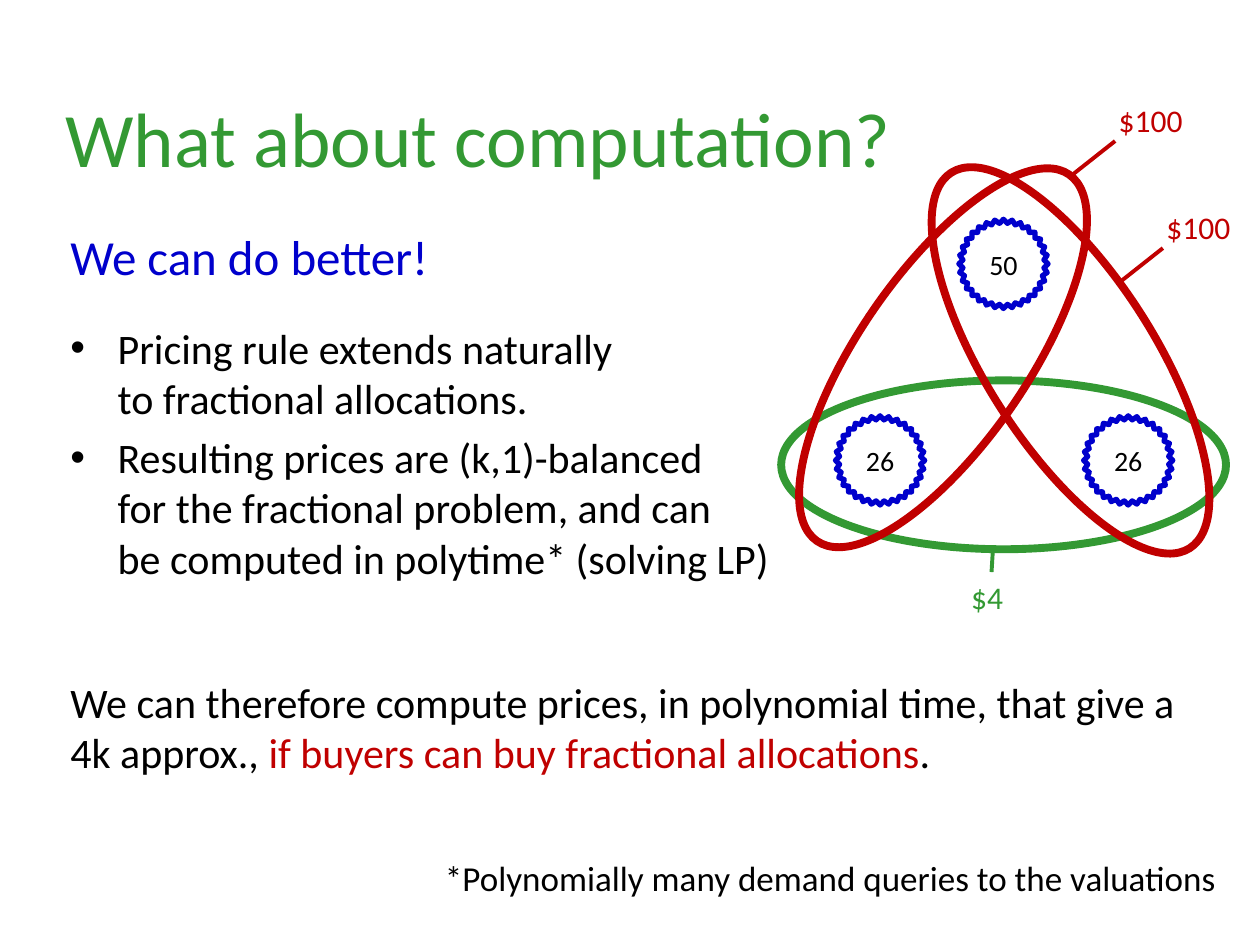
from lxml import etree
from pptx import Presentation
from pptx.dml.color import RGBColor
from pptx.enum.shapes import MSO_CONNECTOR, MSO_SHAPE
from pptx.enum.text import MSO_ANCHOR, PP_ALIGN
from pptx.oxml.ns import qn
from pptx.util import Pt

STAR, ELLIPSE = MSO_SHAPE.STAR_32_POINT, MSO_SHAPE.OVAL
STRAIGHT = MSO_CONNECTOR.STRAIGHT
LEFT, CENTER, RIGHT = PP_ALIGN.LEFT, PP_ALIGN.CENTER, PP_ALIGN.RIGHT
MIDDLE = MSO_ANCHOR.MIDDLE
BLACK, WHITE, BLUE, GREEN, RED = "000000", "FFFFFF", "0000CC", "339933", "C00000"


def rgb(value):
    return RGBColor.from_string(value)


class SlideBuilder:
    """Hold the slide and its font, and add each kind of element in points."""

    font = "Calibri"

    def __init__(self, slide):
        self.slide = slide

    def add_text(self, paragraph, text, size, color):
        for index, line in enumerate(text.split("\n")):
            if index:
                paragraph.add_line_break()
            run = paragraph.add_run()
            run.text = line
            run.font.name = self.font
            run.font.size = Pt(size)
            run.font.color.rgb = rgb(color)

    def bullet(self, paragraph, indent):
        properties = paragraph._p.get_or_add_pPr()
        properties.set("marL", str(Pt(indent)))
        properties.set("indent", str(-Pt(indent)))
        etree.SubElement(properties, qn("a:buFont")).set("typeface", "Arial")
        etree.SubElement(properties, qn("a:buChar")).set("char", "•")

    def text_frame(self, left, top, width, height, wrap=True):
        box = self.slide.shapes.add_textbox(Pt(left), Pt(top), Pt(width), Pt(height))
        box.text_frame.word_wrap = wrap
        return box.text_frame

    def label(self, text, bounds, size, color, align=LEFT, wrap=True):
        paragraph = self.text_frame(*bounds, wrap=wrap).paragraphs[0]
        paragraph.alignment = align
        self.add_text(paragraph, text, size, color)

    def body(self, bounds, paragraphs):
        frame = self.text_frame(*bounds)
        for index, (gap, size, bulleted, runs) in enumerate(paragraphs):
            paragraph = frame.add_paragraph() if index else frame.paragraphs[0]
            paragraph.alignment = LEFT
            paragraph.space_before = Pt(gap)
            if bulleted:
                self.bullet(paragraph, 27)
            for text, color in runs:
                self.add_text(paragraph, text, size, color)

    def outline(self, kind, left, top, width, height, color, weight):
        shape = self.slide.shapes.add_shape(kind, Pt(left), Pt(top), Pt(width), Pt(height))
        shape.shadow.inherit = False
        shape.fill.background()
        shape.line.color.rgb = rgb(color)
        shape.line.width = Pt(weight)
        return shape

    def item(self, value, left, top):
        star = self.outline(STAR, left, top, 51, 51, BLUE, 3)
        star.adjustments[0] = 0.456
        star.fill.solid()
        star.fill.fore_color.rgb = rgb(WHITE)
        frame = star.text_frame
        frame.margin_left = frame.margin_right = 0
        frame.vertical_anchor = MIDDLE
        frame.paragraphs[0].alignment = CENTER
        self.add_text(frame.paragraphs[0], value, 16, BLACK)

    def bundle(self, left, top, color, rotation=0):
        self.outline(ELLIPSE, left, top, 254.2, 96.5, color, 4.5).rotation = rotation

    def leader(self, x1, y1, x2, y2, color):
        line = self.slide.shapes.add_connector(STRAIGHT, Pt(x1), Pt(y1), Pt(x2), Pt(y2))
        line.line.color.rgb = rgb(color)
        line.line.width = Pt(2.25)
        etree.SubElement(line._element.spPr, qn("a:effectLst"))


def main():
    deck = Presentation()
    deck.slide_width, deck.slide_height = Pt(720), Pt(540)
    page = SlideBuilder(deck.slides.add_slide(deck.slide_layouts[6]))

    page.label("What about computation?", (30.2, 48.2, 491.8, 60.5), 44, GREEN, wrap=False)
    page.body((33.1, 126, 663.1, 372.2), [
        (0, 28, False, [("We can do better!", BLUE)]),
        (21, 24, True, [("Pricing rule extends naturally\nto fractional allocations.", BLACK)]),
        (4.8, 24, True, [("Resulting prices are (k,1)-balanced\n"
                          "for the fractional problem, and can\n"
                          "be computed in polytime* (solving LP)", BLACK)]),
        (53.5, 24, False, [
            ("We can therefore compute prices, in polynomial time, that give a 4k approx., ", BLACK),
            ("if buyers can buy fractional allocations", RED),
            (".", BLACK)]),
    ])

    for value, left, top in (("26", 477.4, 237.6), ("50", 547.9, 125.3), ("26", 619.2, 237.6)):
        page.item(value, left, top)

    page.bundle(446.4, 217.4, GREEN)
    page.bundle(484.6, 157.7, RED, 57.6)
    page.bundle(411.8, 156.2, RED, 304.5)

    for left, top in ((659.5, 115.2), (632.2, 54)):
        page.leader(left + 5, top + 26.6, left - 18.8, top + 45.4, RED)
        page.label("$100", (left, top, 59.8, 28.8), 18, RED)
    page.leader(567.4, 313.9, 566.6, 326.9, GREEN)
    page.label("$4", (547.9, 326.9, 37.4, 28.8), 18, GREEN)

    page.label("*Polynomially many demand queries to the valuations",
               (138.2, 486, 563.8, 31.7), 20, BLACK, RIGHT)
    deck.save("out.pptx")


if __name__ == "__main__":
    main()
